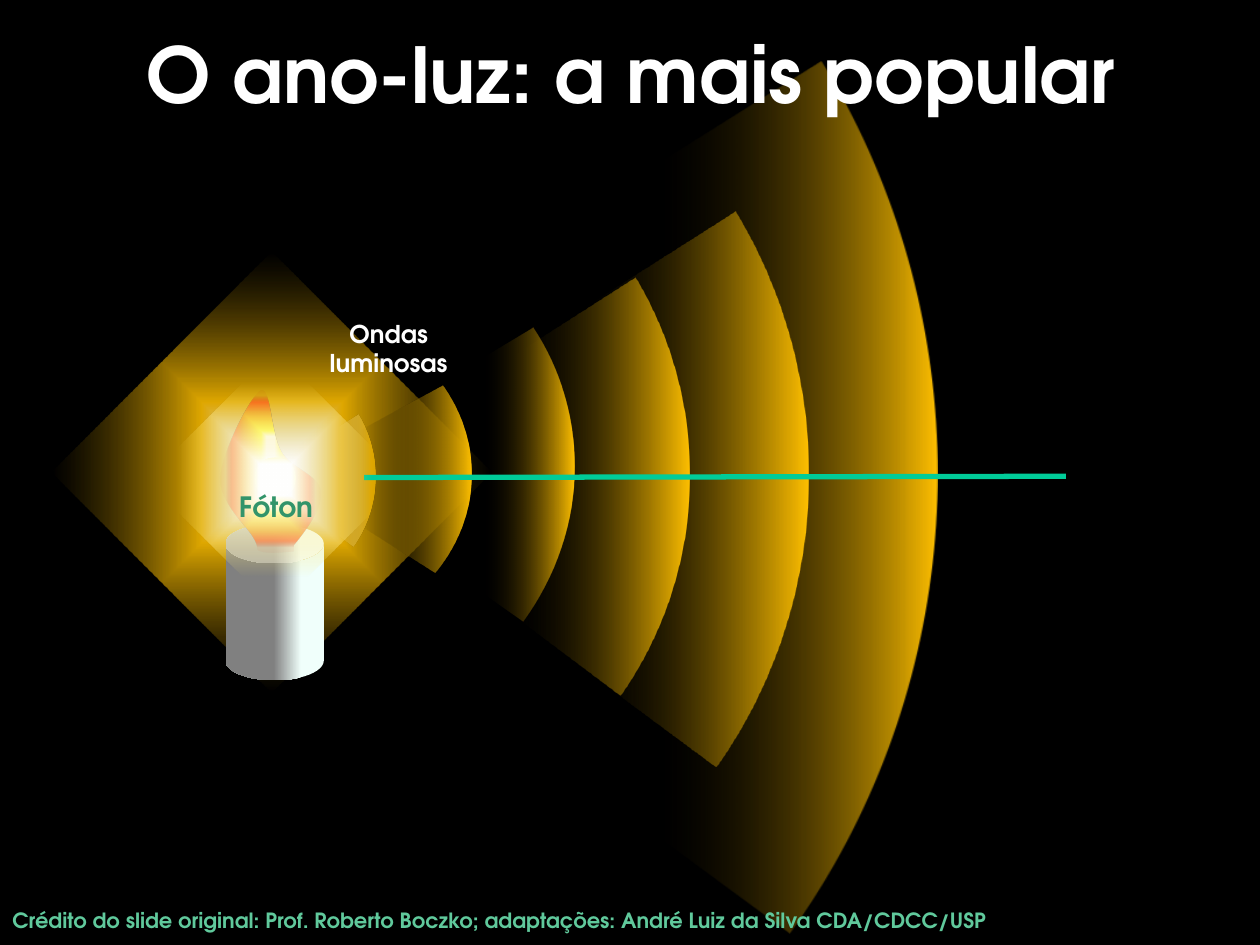
import pptx
import pptx.dml.color
import pptx.enum.shapes
import pptx.enum.text
import pptx.oxml
import pptx.oxml.ns
import pptx.util

Inches = pptx.util.Inches
MSO = pptx.enum.shapes.MSO_SHAPE
ANCHOR = pptx.enum.text.MSO_ANCHOR
ALIGN = pptx.enum.text.PP_ALIGN
FIT = pptx.enum.text.MSO_AUTO_SIZE.SHAPE_TO_FIT_TEXT


def rgb(value):
    return pptx.dml.color.RGBColor.from_string(value)


def set_all(obj, values):
    for name, value in values.items():
        setattr(obj, name, value)


def bezier(points, steps=16):
    result = [points[0]]
    for i in range(0, len(points) - 1, 3):
        a, b, c, d = points[i:i + 4]
        for k in range(1, steps + 1):
            t = k / steps
            u = 1 - t
            result.append(tuple(
                u**3 * a[j] + 3 * u * u * t * b[j] + 3 * u * t * t * c[j] + t**3 * d[j]
                for j in (0, 1)))
    return result


class Canvas:
    font = "TeX Gyre Adventor"

    def __init__(self, s):
        self.s = s
        self.shapes = s.shapes

    def start_group(self):
        self.shapes = self.s.shapes.add_group_shape().shapes

    def end_group(self):
        self.shapes = self.s.shapes

    def gradient(self, sp, stops, angle=None):
        stop_xml = "".join(
            f'<a:gs pos="{pos * 1000}"><a:srgbClr val="{color}">'
            f'<a:alpha val="{(alpha[0] if alpha else 100) * 1000}"/></a:srgbClr></a:gs>'
            for pos, color, *alpha in stops)
        if angle is None:
            mode = ('<a:path path="shape"><a:fillToRect l="50000" t="50000" '
                    'r="50000" b="50000"/></a:path>')
        else:
            mode = f'<a:lin ang="{angle * 60000}" scaled="0"/>'
        sp.fill.background()
        sp.line.fill.background()
        sp.shadow.inherit = False
        spPr = sp.element.spPr
        spPr.replace(spPr.find(pptx.oxml.ns.qn("a:noFill")), pptx.oxml.parse_xml(
            f'<a:gradFill {pptx.oxml.ns.nsdecls("a")} rotWithShape="1">'
            f'<a:gsLst>{stop_xml}</a:gsLst>{mode}</a:gradFill>'))

    def shape(self, kind, box, stops, angle=None, rotation=0, adjustments=(), flip=False):
        sp = self.shapes.add_shape(kind, *map(Inches, box))
        sp.rotation = rotation
        for i, value in enumerate(adjustments):
            sp.adjustments[i] = value
        if flip:
            sp.element.spPr.xfrm.set("flipH", "1")
        self.gradient(sp, stops, angle)

    def wave(self, box, start, end, stops):
        angles = [deg % 360 * 0.6 for deg in (start, end)]
        self.shape(MSO.ARC, box, stops, 180, adjustments=angles)

    def outline(self, points, stops, angle=None):
        first, *rest = [(Inches(x), Inches(y)) for x, y in points]
        fb = self.shapes.build_freeform(*first)
        fb.add_line_segments(rest, close=True)
        self.gradient(fb.convert_to_shape(), stops, angle)

    def text(self, box, lines, size, color, align=ALIGN.CENTER, wrap=False,
             anchor=ANCHOR.TOP):
        tf = self.shapes.add_textbox(*map(Inches, box)).text_frame
        set_all(tf, {"word_wrap": wrap, "auto_size": FIT, "vertical_anchor": anchor})
        for i, line in enumerate(lines):
            p = tf.add_paragraph() if i else tf.paragraphs[0]
            p.alignment = align
            r = p.add_run()
            r.text = line
            set_all(r.font, {"name": self.font, "size": pptx.util.Pt(size), "bold": True})
            r.font.color.rgb = rgb(color)

    def line(self, start, end, color, width):
        cn = self.shapes.add_connector(
            pptx.enum.shapes.MSO_CONNECTOR.STRAIGHT, *map(Inches, start + end))
        cn.line.color.rgb = rgb(color)
        cn.line.width = pptx.util.Pt(width)
        cn.element.spPr.append(pptx.oxml.parse_xml(
            f'<a:effectLst {pptx.oxml.ns.nsdecls("a")}/>'))


def main():
    prs = pptx.Presentation()
    set_all(prs, {"slide_width": Inches(10), "slide_height": Inches(7.5)})
    s = prs.slides.add_slide(prs.slide_layouts[6])
    s.background.fill.solid()
    s.background.fill.fore_color.rgb = rgb("000000")
    c = Canvas(s)

    def amber(fade):
        return [(0, "FFC000"), (fade, "000000", 0)]

    for box, start, end, fade in (
        ((-4.84, -2.45, 12.28, 12.42), -32.1, 36.3, 19),
        ((-1.32, -0.19, 7.74, 7.91), -32.4, 36.5, 24),
        ((-0.28, 0.8, 5.75, 5.94), -32.6, 36.9, 25),
    ):
        c.wave(box, start, end, amber(fade))
    front = bezier([(4.23, 2.6), (4.45, 2.93), (4.56, 3.32), (4.56, 3.7),
                    (4.56, 4.15), (4.41, 4.57), (4.15, 4.93)])
    c.outline(front + [(2.4, 3.7)], amber(35), 180)
    c.shape(MSO.RECTANGLE, (0.92, 2.51, 2.47, 2.47),
            [(7, "FFFFFF", 79), (32, "FFC000", 87), (100, "000000", 44)], rotation=225)
    c.wave((0.7, 2.43, 3.04, 2.66), -28.5, 32.4, amber(29))
    c.wave((1.14, 2.84, 1.84, 1.88), -32.1, 36.7,
           [(2, "FFC000", 71), (16, "DBDBDB", 0)])

    c.text((2.5, 2.48, 1.17, 0.58), ["Ondas", "luminosas"], 14, "FFFFFF")
    c.text((0, 7.15, 10, 0.3),
           ["Crédito do slide original: Prof. Roberto Boczko; adaptações: "
            "André Luiz da Silva CDA/CDCC/USP"],
           12, "60C99C", ALIGN.LEFT, True)

    c.start_group()
    c.shape(MSO.CAN, (1.79, 4.16, 0.78, 1.24), [(23, "F0FFFB"), (51, "808080")],
            0, adjustments=[0.4], flip=True)
    flame = bezier([
        (2.33, 4.32), (2.45, 4.17), (2.56, 4.02), (2.54, 3.89),
        (2.53, 3.77), (2.3, 3.71), (2.23, 3.58),
        (2.15, 3.45), (2.15, 3.07), (2.07, 3.1),
        (1.99, 3.14), (1.76, 3.59), (1.75, 3.79),
        (1.74, 3.98), (1.96, 4.17), (2.01, 4.26),
        (2.07, 4.36), (2.01, 4.35), (2.07, 4.37),
        (2.12, 4.39), (2.23, 4.38), (2.33, 4.37)])
    c.outline(flame, [(8, "FFFFFF"), (19, "FFFF00"), (57, "EA8D04"),
                      (76, "FF3300", 75), (89, "C00000", 5)])
    c.end_group()

    c.line((8.46, 3.78), (2.89, 3.79), "00CC99", 3)

    c.start_group()
    c.shape(MSO.OVAL, (2.02, 3.63, 0.33, 0.33),
            [(0, "FFFF00"), (41, "FFFFFF"), (97, "FFFF00")], flip=True)
    c.shape(MSO.RECTANGLE, (1.46, 3.08, 1.45, 1.45),
            [(12, "FFFFFF"), (75, "FDE65D", 0)], rotation=315)
    c.text((1.78, 3.84, 0.82, 0.37), ["Fóton"], 16, "32946A")
    c.end_group()

    c.text((0.11, 0.16, 9.8, 0.84), ["O ano-luz: a mais popular"], 44, "FFFFFF",
           wrap=True, anchor=ANCHOR.MIDDLE)
    prs.save("out.pptx")


if __name__ == "__main__":
    main()
